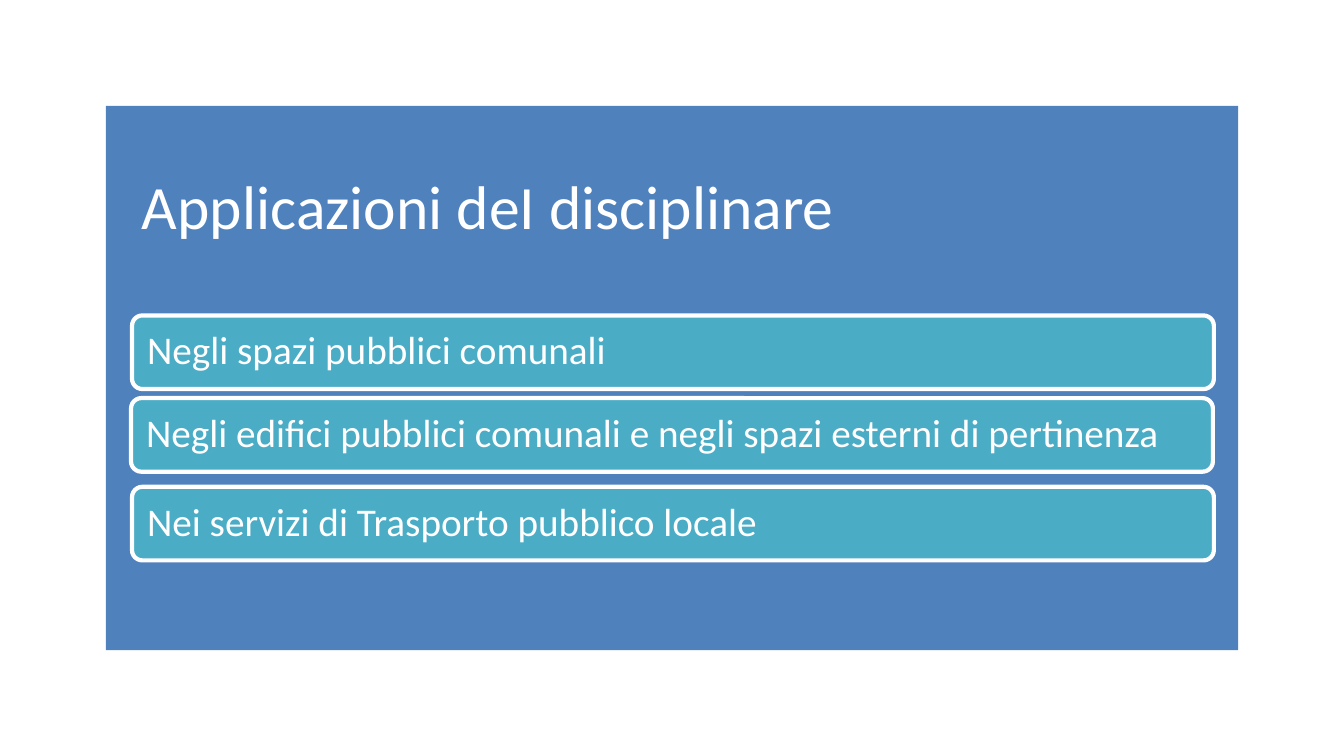
"""Build the slide listing where the regulation applies."""
from dataclasses import dataclass

from pptx import Presentation
from pptx.dml.color import RGBColor
from pptx.enum.shapes import MSO_SHAPE as Shp
from pptx.enum.text import MSO_ANCHOR as Anchor, PP_ALIGN as Align
from pptx.util import Inches, Pt


@dataclass(frozen=True)
class Theme:
    panel: RGBColor = RGBColor(0x4F, 0x81, 0xBD)
    bar: RGBColor = RGBColor(0x4B, 0xAC, 0xC6)
    white: RGBColor = RGBColor(0xFF, 0xFF, 0xFF)
    font: str = "Calibri"
    title_size: int = 44
    bar_size: int = 28
    border: int = 3


@dataclass(frozen=True)
class Bar:
    left: float
    top: float
    text: str


THEME = Theme()
WIDTH = 10.73
BAR_HEIGHT = 0.73
BARS = [
    Bar(1.31, 3.13, "Negli spazi pubblici comunali"),
    Bar(1.3, 3.95, "Negli edifici pubblici comunali e negli spazi esterni di pertinenza"),
    Bar(1.31, 4.83, "Nei servizi di Trasporto pubblico locale"),
]


def write(sp, text: str, size: int, anchor: Anchor, inset_x: float, inset_y: float) -> None:
    tf = sp.text_frame
    tf.word_wrap = True
    tf.vertical_anchor = anchor
    tf.margin_left = tf.margin_right = Inches(inset_x)
    tf.margin_top = tf.margin_bottom = Inches(inset_y)
    p = tf.paragraphs[0]
    p.alignment = Align.LEFT
    p.line_spacing = 0.9
    r = p.add_run()
    r.text = text
    r.font.name = THEME.font
    r.font.size = Pt(size)
    r.font.color.rgb = THEME.white


def add_panel(s) -> None:
    sp = s.shapes.add_shape(Shp.RECTANGLE, Inches(1.05), Inches(1.05), Inches(11.23), Inches(5.4))
    sp.shadow.inherit = False
    sp.fill.solid()
    sp.fill.fore_color.rgb = THEME.panel
    sp.line.fill.background()


def add_title(s, text: str) -> None:
    sp = s.shapes.add_textbox(Inches(1.31), Inches(1.29), Inches(WIDTH), Inches(1.17))
    write(sp, text, THEME.title_size, Anchor.BOTTOM, 0.1, 0.05)


def add_bar(s, bar: Bar) -> None:
    sp = s.shapes.add_shape(Shp.ROUNDED_RECTANGLE, Inches(bar.left), Inches(bar.top),
                            Inches(WIDTH), Inches(BAR_HEIGHT))
    sp.adjustments[0] = 0.14
    sp.shadow.inherit = False
    sp.fill.solid()
    sp.fill.fore_color.rgb = THEME.bar
    sp.line.color.rgb = THEME.white
    sp.line.width = Pt(THEME.border)
    write(sp, bar.text, THEME.bar_size, Anchor.MIDDLE, 0.12, 0.15)


def main() -> None:
    prs = Presentation()
    prs.slide_width, prs.slide_height = Inches(13.33), Inches(7.5)
    s = prs.slides.add_slide(prs.slide_layouts[6])
    add_panel(s)
    add_title(s, "Applicazioni deI disciplinare")
    for bar in BARS:
        add_bar(s, bar)
    prs.save("out.pptx")


if __name__ == "__main__":
    main()
